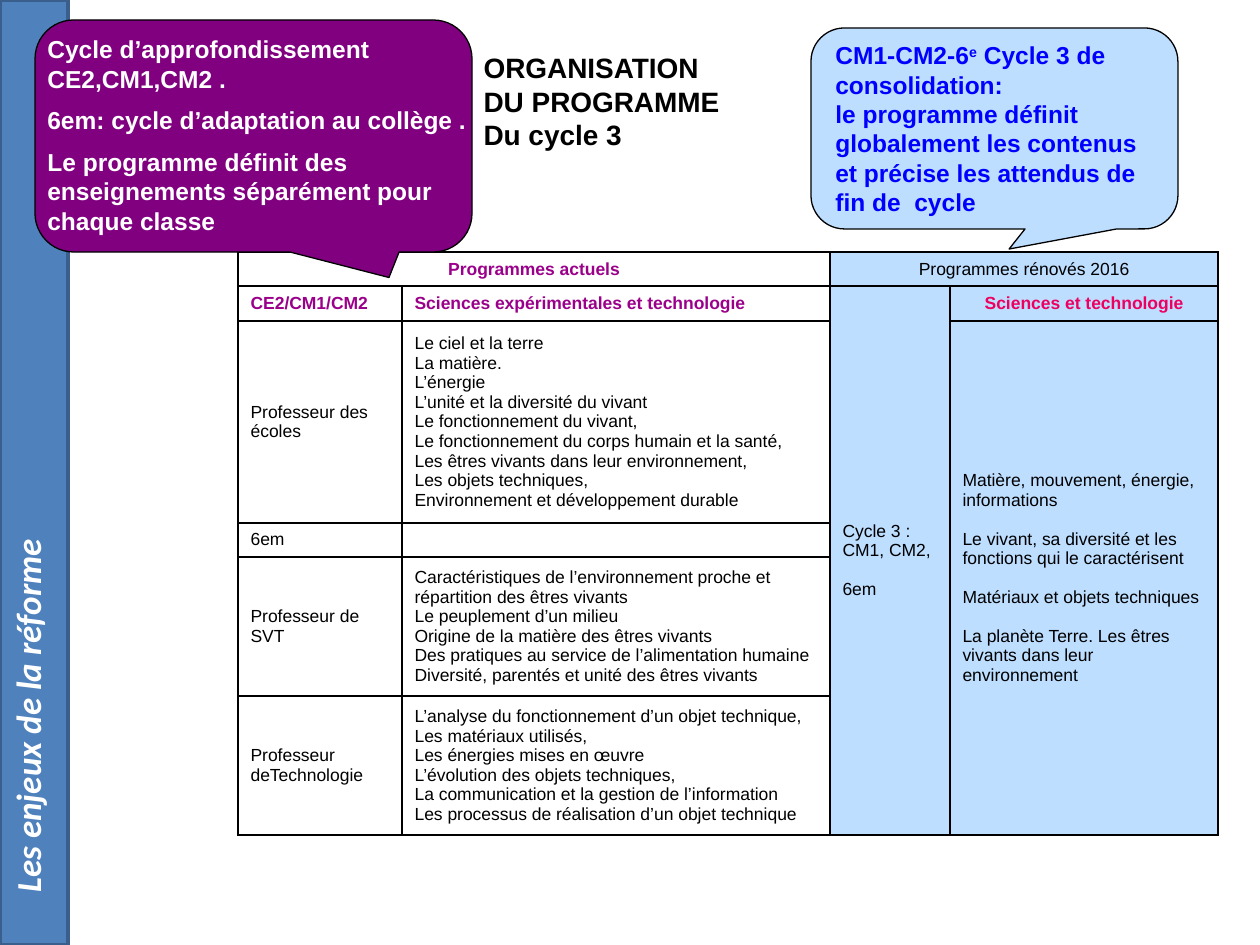
from lxml import etree
from pptx import Presentation
from pptx import util as u
from pptx.dml.color import RGBColor
from pptx.enum import shapes, text
from pptx.oxml.ns import qn

WHITE, BLACK, SKY = "FFFFFF", "000000", "BDDEFF"
PLUM, VIOLET, PINK, BLUE = "800080", "9B008A", "EE0060", "0000FF"

SIDE = "Les enjeux de la réforme"
HEAD = ["ORGANISATION", "DU PROGRAMME", "Du cycle 3"]
OLD = ["Cycle d’approfondissement CE2,CM1,CM2 .",
       "6em: cycle d’adaptation au collège .",
       "Le programme définit des enseignements séparément pour chaque classe"]
NEW = ["CM1-CM2-6e Cycle 3 de consolidation:",
       "le programme définit globalement les contenus et précise les "
       "attendus de fin de  cycle"]

# Table: column widths and row heights in px
COLS = [164, 428, 120, 268]
ROWS = [34, 35, 202, 34, 139, 139]
# first cell, last cell of each merged block
SPANS = [((0, 0), (0, 1)), ((0, 2), (0, 3)), ((1, 2), (5, 2)), ((2, 3), (5, 3))]
# (row, column): lines
CELLS = {
    (0, 0): ["Programmes actuels"],
    (0, 2): ["Programmes rénovés 2016"],
    (1, 0): ["CE2/CM1/CM2"],
    (1, 1): ["Sciences expérimentales et technologie"],
    (1, 2): ["Cycle 3\u00a0:", "CM1, CM2,", "6em"],
    (1, 3): ["Sciences et technologie"],
    (2, 0): ["Professeur des écoles"],
    (2, 1): ["Le ciel et la terre", "La matière.", "L’énergie",
             "L’unité et la diversité du vivant",
             "Le fonctionnement du vivant,",
             "Le fonctionnement du corps humain et la santé,",
             "Les êtres vivants dans leur environnement,",
             "Les objets techniques,",
             "Environnement et développement durable"],
    (2, 3): ["Matière, mouvement, énergie, informations",
             "Le vivant, sa diversité et les fonctions qui le caractérisent",
             "Matériaux et objets techniques",
             "La planète Terre. Les êtres vivants dans leur environnement"],
    (3, 0): ["6em"],
    (4, 0): ["Professeur de SVT"],
    (4, 1): ["Caractéristiques de l’environnement proche et répartition "
             "des êtres vivants",
             "Le peuplement d’un milieu",
             "Origine de la matière des êtres vivants",
             "Des pratiques au service de l’alimentation humaine",
             "Diversité, parentés et unité des êtres vivants"],
    (5, 0): ["Professeur deTechnologie"],
    (5, 1): ["L’analyse du fonctionnement d’un objet technique,",
             "Les matériaux utilisés,",
             "Les énergies mises en œuvre",
             "L’évolution des objets techniques,",
             "La communication et la gestion de l’information",
             "Les processus de réalisation d’un objet technique"],
}
BOLD = {(0, 0): VIOLET, (1, 0): VIOLET, (1, 1): VIOLET, (1, 3): PINK}
MID = [(0, 0), (0, 2), (1, 3)]
GAPS = {(1, 2): [2], (2, 3): [1, 2, 3]}  # paragraphs set one line apart


def px(n):
    return round(n * 914400 / 126)


def box(*at):
    return [px(n) for n in at]


def rgb(code):
    return RGBColor.from_string(code)


def paint(part, code):
    part.fill.solid()
    part.fill.fore_color.rgb = rgb(code)


def style(font, size, code, bold=True, name="Arial"):
    font.size, font.bold, font.name = u.Pt(size), bold, name
    font.color.rgb = rgb(code)


def write(frame, lines, size, code, bold=True, name="Arial"):
    frame.text = "\n".join(lines)
    for para in frame.paragraphs:
        para.alignment = text.PP_ALIGN.LEFT
        for run in para.runs:
            style(run.font, size, code, bold, name)


def shape(kind, at, fill, line, width):
    item = slide.shapes.add_shape(kind, *box(*at))
    item.shadow.inherit = False
    paint(item, fill)
    item.line.color.rgb = rgb(line)
    item.line.width = u.Pt(width)
    return item


def bubble(at, tip, fill, place, lines, code):
    item = shape(shapes.MSO_SHAPE.ROUNDED_RECTANGULAR_CALLOUT, at, fill, BLACK, 0.75)
    item.adjustments[0], item.adjustments[1] = tip
    frame = slide.shapes.add_textbox(*box(*place)).text_frame
    frame.word_wrap = True
    write(frame, lines, 14, code)
    return frame


def edge(cell):
    props = cell._tc.get_or_add_tcPr()
    for side in ("lnL", "lnR", "lnT", "lnB"):
        line = etree.SubElement(props, qn("a:" + side), w="12700")
        fill = etree.SubElement(line, qn("a:solidFill"))
        etree.SubElement(fill, qn("a:srgbClr"), val=BLACK)


deck = Presentation()
deck.slide_width, deck.slide_height = px(1260), px(945)
slide = deck.slides.add_slide(deck.slide_layouts[5])

# Title
title = slide.shapes.title
title.left, title.top, title.width, title.height = box(471, 42, 323, 118)
paint(title, WHITE)
title.text_frame.vertical_anchor = text.MSO_ANCHOR.MIDDLE
title.text_frame.auto_size = text.MSO_AUTO_SIZE.NONE
write(title.text_frame, HEAD, 16, BLACK)

# Side band with upward text
band = shape(shapes.MSO_SHAPE.RECTANGLE, (0, 0, 68, 945), "4F81BD", "3A5F8C", 2)
frame = band.text_frame
frame.vertical_anchor = text.MSO_ANCHOR.TOP
write(frame, [SIDE], 20, WHITE, name="Calibri")
frame.paragraphs[0].runs[0].font.italic = True
frame._txBody.bodyPr.set("vert", "vert270")
frame.paragraphs[0]._p.get_or_add_pPr().set("marL", str(px(40)))

# Programme table
table = slide.shapes.add_table(
    len(ROWS), len(COLS), *box(238, 252, sum(COLS), sum(ROWS))).table
table.first_row = table.horz_banding = False
for col, wide in zip(table.columns, COLS):
    col.width = px(wide)
for row, high in zip(table.rows, ROWS):
    row.height = px(high)
for r in range(len(ROWS)):
    for c in range(len(COLS)):
        cell, key = table.cell(r, c), (r, c)
        edge(cell)
        paint(cell, WHITE if c < 2 else SKY)
        cell.vertical_anchor = text.MSO_ANCHOR.MIDDLE
        if key not in CELLS:
            style(cell.text_frame.paragraphs[0].font, 10, BLACK, False)
            continue
        write(cell.text_frame, CELLS[key], 10, BOLD.get(key, BLACK), key in BOLD)
        if key in MID:
            cell.text_frame.paragraphs[0].alignment = text.PP_ALIGN.CENTER
        for n in GAPS.get(key, []):
            cell.text_frame.paragraphs[n].space_before = u.Pt(11)
for first, last in SPANS:
    table.cell(*first).merge(table.cell(*last))

# Callouts
frame = bubble((35, 20, 437, 232), (0.31, 0.61), PLUM,
               (35, 28, 481, 218), OLD, WHITE)
for para in frame.paragraphs[1:]:
    para.space_before = u.Pt(7)

frame = bubble((811, 28, 367, 201), (0.04, 0.6), SKY,
               (823, 34, 339, 190), NEW, BLUE)
lead = frame.paragraphs[0]
start, end = NEW[0].split("e", 1)
lead.runs[0].text = start
for part in ("e", end):
    run = lead.add_run()
    run.text = part
    style(run.font, 14, BLUE)
lead.runs[1]._r.get_or_add_rPr().set("baseline", "30000")

deck.save("out.pptx")
